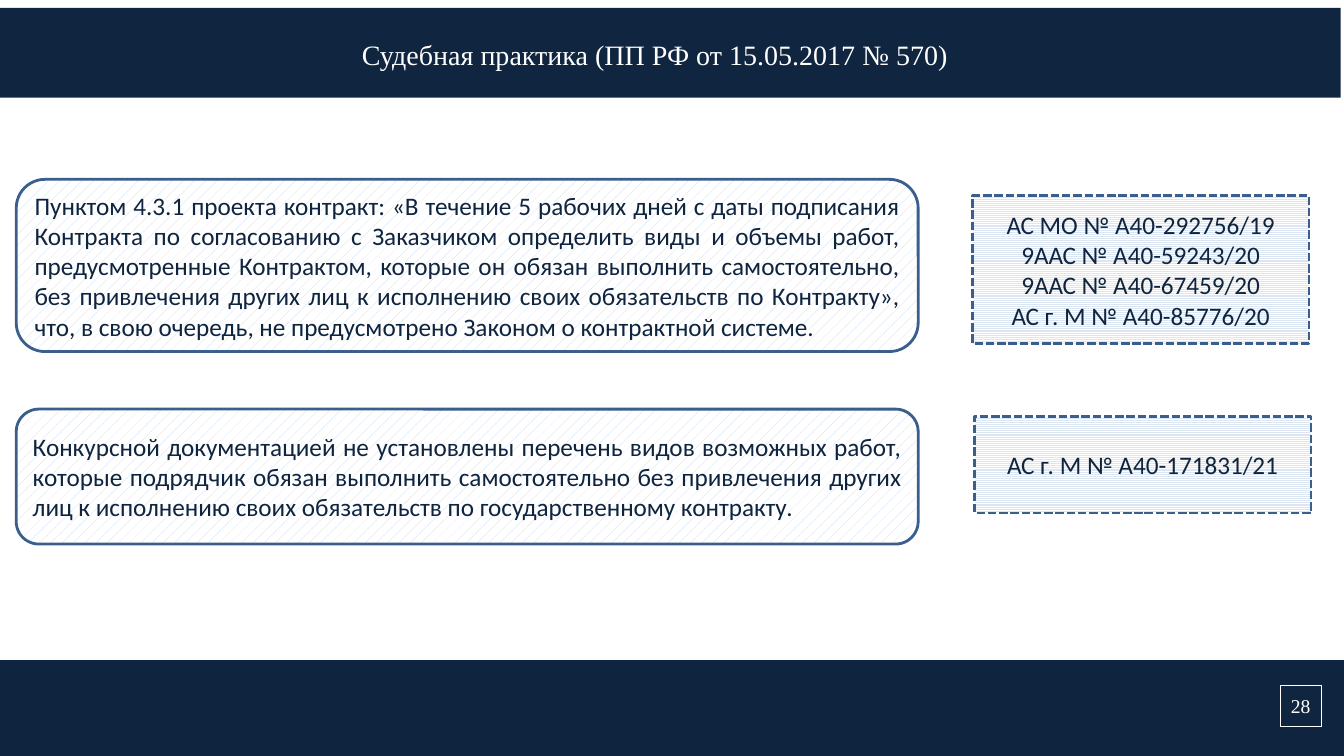
import pptx
import pptx.dml.color
import pptx.enum.dml
import pptx.enum.shapes
import pptx.enum.text
import pptx.oxml.ns
import pptx.util
from lxml import etree

Cm, Pt = pptx.util.Cm, pptx.util.Pt
RGBColor = pptx.dml.color.RGBColor
Shape = pptx.enum.shapes.MSO_SHAPE
Pattern = pptx.enum.dml.MSO_PATTERN
Align = pptx.enum.text.PP_ALIGN
Anchor = pptx.enum.text.MSO_ANCHOR

# Content
HEADING = "Судебная практика (ПП РФ от 15.05.2017 № 570)"
PAGE_NUMBER = "28"
# Each case: finding, its top and height; rulings, their left, top and height (cm)
CASES = [
    ("Пунктом 4.3.1 проекта контракт: «В течение 5 рабочих дней с даты подписания "
     "Контракта по согласованию с Заказчиком определить виды и объемы работ, "
     "предусмотренные Контрактом, которые он обязан выполнить самостоятельно, "
     "без привлечения других лиц к исполнению своих обязательств по Контракту», "
     "что, в свою очередь, не предусмотрено Законом о контрактной системе.",
     4.52, 4.34,
     ["АС МО № А40-292756/19", "9ААС № А40-59243/20",
      "9ААС № А40-67459/20", "АС г. М № А40-85776/20"],
     24.51, 4.93, 3.73),
    ("Конкурсной документацией не установлены перечень видов возможных работ, "
     "которые подрядчик обязан выполнить самостоятельно без привлечения других "
     "лиц к исполнению своих обязательств по государственному контракту.",
     10.31, 3.4,
     ["АС г. М № А40-171831/21"],
     24.56, 10.49, 2.44),
]

# Look
NAVY = RGBColor(0x10, 0x25, 0x3F)
INK = RGBColor(0x0F, 0x24, 0x3E)
BORDER = RGBColor(0x3A, 0x5F, 0x8C)
FINDING_HATCH = RGBColor(0xC6, 0xD9, 0xF1)
RULING_HATCH = RGBColor(0xDC, 0xE6, 0xF2)
WHITE = RGBColor(0xFF, 0xFF, 0xFF)
SERIF, SANS = "Times New Roman", "Calibri"
SLIDE_W, SLIDE_H = 33.87, 19.05
FINDING_LEFT, FINDING_W, RULINGS_W = 0.41, 22.73, 8.48

deck = pptx.Presentation()
deck.slide_width, deck.slide_height = Cm(SLIDE_W), Cm(SLIDE_H)
slide = deck.slides.add_slide(deck.slide_layouts[5])


def write(holder, lines, font, size, color, align, anchor=Anchor.MIDDLE):
    frame = holder.text_frame
    frame.text = "\n".join(lines)
    frame.word_wrap = True
    frame.vertical_anchor = anchor
    for paragraph in frame.paragraphs:
        paragraph.alignment = align
        for run in paragraph.runs:
            run.font.name, run.font.size = font, Pt(size)
            run.font.color.rgb = color


def add_panel(kind, left, top, width, height, fill, line=None, line_pt=2, pattern=None):
    panel = slide.shapes.add_shape(kind, Cm(left), Cm(top), Cm(width), Cm(height))
    panel.shadow.inherit = False
    if pattern is None:
        panel.fill.solid()
    else:
        panel.fill.patterned()
        panel.fill.pattern = pattern
        panel.fill.back_color.rgb = WHITE
    panel.fill.fore_color.rgb = fill
    if line is None:
        panel.line.fill.background()
    else:
        panel.line.color.rgb = line
        panel.line.width = Pt(line_pt)
    return panel


# Header band with the title in front of it
add_panel(Shape.RECTANGLE, -0.08, 0.2, SLIDE_W, 2.26, NAVY)
title = slide.shapes.title
title.left, title.top, title.width, title.height = Cm(-0.43), Cm(0.81), Cm(SLIDE_W), Cm(1.12)
write(title, [HEADING], SERIF, 20, WHITE, Align.CENTER, Anchor.TOP)
slide.shapes._spTree.append(title._element)

# Footer band, its edge line and the page number
add_panel(Shape.RECTANGLE, 0, 16.66, SLIDE_W, 2.59, INK, INK)
edge = slide.shapes.add_connector(pptx.enum.shapes.MSO_CONNECTOR.STRAIGHT,
                                  Cm(33.81), Cm(17.78), Cm(33.81), Cm(SLIDE_H))
edge.line.color.rgb, edge.line.width = INK, Pt(4.5)
etree.SubElement(edge._element.spPr, pptx.oxml.ns.qn("a:effectLst"))
page = add_panel(Shape.RECTANGLE, 32.26, 17.27, 1.04, 1.04, NAVY, WHITE, 0.5)
page.text_frame.margin_left = page.text_frame.margin_right = 0
write(page, [PAGE_NUMBER], SERIF, 14, WHITE, Align.CENTER)

# Findings on the left, court rulings on the right
for finding, top, height, rulings, rulings_left, rulings_top, rulings_height in CASES:
    finding_box = add_panel(Shape.ROUNDED_RECTANGLE, FINDING_LEFT, top, FINDING_W, height,
                            FINDING_HATCH, BORDER, pattern=Pattern.PERCENT_10)
    write(finding_box, [finding], SANS, 18, INK, Align.JUSTIFY)
    rulings_box = add_panel(Shape.RECTANGLE, rulings_left, rulings_top, RULINGS_W,
                            rulings_height, RULING_HATCH, BORDER,
                            pattern=Pattern.NARROW_HORIZONTAL)
    rulings_box.line.dash_style = pptx.enum.dml.MSO_LINE.SQUARE_DOT
    write(rulings_box, rulings, SANS, 18, INK, Align.CENTER)

deck.save("out.pptx")
